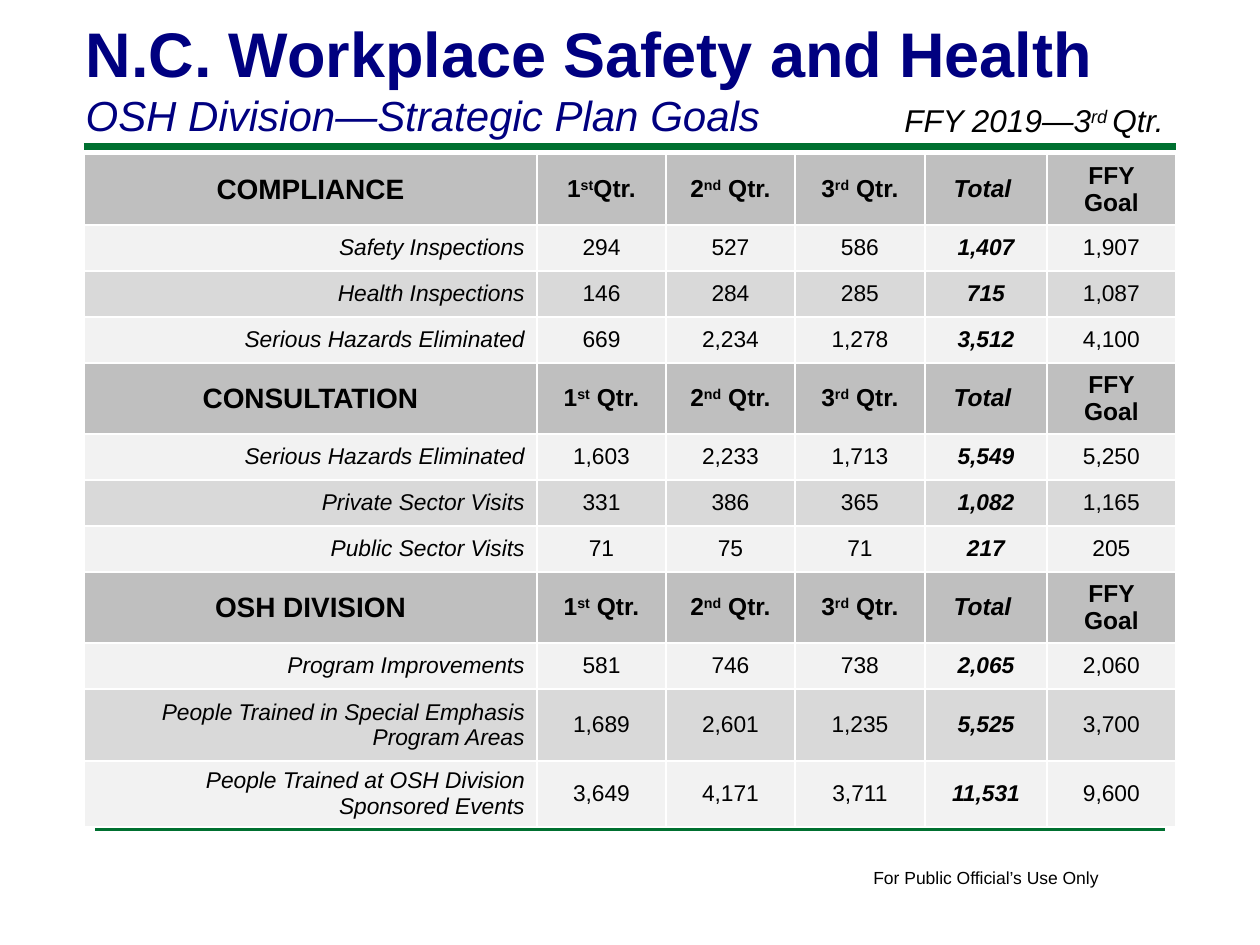
from lxml import etree
from pptx import Presentation
from pptx.dml.color import RGBColor
from pptx.enum.shapes import MSO_CONNECTOR
from pptx.enum.text import MSO_ANCHOR, MSO_AUTO_SIZE, PP_ALIGN
from pptx.oxml import parse_xml
from pptx.oxml.ns import nsdecls, qn
from pptx.util import Emu, Pt

LEFT, CENTER, RIGHT = PP_ALIGN.LEFT, PP_ALIGN.CENTER, PP_ALIGN.RIGHT
TOP, MIDDLE = MSO_ANCHOR.TOP, MSO_ANCHOR.MIDDLE
PX = 914400 / 126
NAVY, GREEN, BLACK, WHITE = "000080", "007030", "000000", "FFFFFF"
HEADER_FILL, BAND_FILLS = "BFBFBF", ("F2F2F2", "D9D9D9")


def px(*lengths):
    """Turn px lengths into a list of EMU."""
    return [Emu(round(length * PX)) for length in lengths]


def write(paragraph, text, size, color=BLACK, bold=False, italic=False, align=LEFT):
    """Fill a paragraph; parts between ^ marks are superscript."""
    paragraph.alignment = align
    paragraph.line_spacing = 1.0
    for i, part in enumerate(text.split("^")):
        run = paragraph.add_run()
        run.text = part
        font = run.font
        font.name, font.size, font.bold, font.italic = "Arial", Pt(size), bold, italic
        font.color.rgb = RGBColor.from_string(color)
        if i % 2:
            run._r.get_or_add_rPr().set("baseline", "30000")


prs = Presentation()
prs.slide_width, prs.slide_height = px(1260, 945)
slide = prs.slides.add_slide(prs.slide_layouts[5])

# Rules above and below the table
for left, right, y, weight in [(84, 1176, 147, 4), (95, 1165, 829, 2)]:
    rule = slide.shapes.add_connector(MSO_CONNECTOR.STRAIGHT, *px(left, y, right, y))
    rule.line.color.rgb = RGBColor.from_string(GREEN)
    rule.line.width = Pt(weight)
    etree.SubElement(rule._element.spPr, qn("a:effectLst"))

# Title and subtitle
title = slide.shapes.title
title.left, title.top, title.width, title.height = px(73, 8, 1040, 140)
heading = title.text_frame
heading.auto_size = MSO_AUTO_SIZE.NONE
heading.vertical_anchor = TOP
write(heading.paragraphs[0], "N.C. Workplace Safety and Health", 36, NAVY, bold=True)
write(heading.add_paragraph(), "OSH Division—Strategic Plan Goals", 24, NAVY, italic=True)

# Goals table: each section has a header row and banded rows
sections = [
    ("COMPLIANCE", "1^st^Qtr.", [
        ("Safety Inspections", "294", "527", "586", "1,407", "1,907"),
        ("Health Inspections", "146", "284", "285", "715", "1,087"),
        ("Serious Hazards Eliminated", "669", "2,234", "1,278", "3,512", "4,100"),
    ]),
    ("CONSULTATION", "1^st^ Qtr.", [
        ("Serious Hazards Eliminated", "1,603", "2,233", "1,713", "5,549", "5,250"),
        ("Private Sector Visits", "331", "386", "365", "1,082", "1,165"),
        ("Public Sector Visits", "71", "75", "71", "217", "205"),
    ]),
    ("OSH DIVISION", "1^st^ Qtr.", [
        ("Program Improvements", "581", "746", "738", "2,065", "2,060"),
        ("People Trained in Special Emphasis Program Areas",
         "1,689", "2,601", "1,235", "5,525", "3,700"),
        ("People Trained at OSH Division Sponsored Events",
         "3,649", "4,171", "3,711", "11,531", "9,600"),
    ]),
]
rows = []
for section, first_quarter, goals in sections:
    rows.append((HEADER_FILL, (section, first_quarter, "2^nd^ Qtr.", "3^rd^ Qtr.",
                               "Total ", "FFY Goal")))
    rows += [(BAND_FILLS[i % 2], goal) for i, goal in enumerate(goals)]

column_widths = [453, 129, 129, 130, 122, 129]
row_heights = [71, 46, 46, 46] * 2 + [71, 46, 72, 66]
table = slide.shapes.add_table(
    len(rows), len(column_widths),
    *px(84, 154, sum(column_widths), sum(row_heights))).table
for column, width in zip(table.columns, px(*column_widths)):
    column.width = width
for row, height in zip(table.rows, px(*row_heights)):
    row.height = height

LABEL, TOTAL = 0, 4
for r, (fill, texts) in enumerate(rows):
    is_header = fill == HEADER_FILL
    for c, text in enumerate(texts):
        cell = table.cell(r, c)
        cell.vertical_anchor = MIDDLE
        tcPr = cell._tc.get_or_add_tcPr()
        for side in ("lnL", "lnR", "lnT", "lnB"):
            tcPr.append(parse_xml(
                f'<a:{side} {nsdecls("a")} w="12700"><a:solidFill>'
                f'<a:srgbClr val="{WHITE}"/></a:solidFill></a:{side}>'))
        cell.fill.solid()
        cell.fill.fore_color.rgb = RGBColor.from_string(fill)
        if is_header:
            size = 16 if c == LABEL else 14
        else:
            size = 13
        write(cell.text_frame.paragraphs[0], text, size,
              bold=is_header or c == TOTAL,
              italic=c == TOTAL or (c == LABEL and not is_header),
              align=RIGHT if c == LABEL and not is_header else CENTER)

# Reporting period and footer
for box, text, size, italic, wrap in [
    ((892, 95, 315, 50), "FFY 2019—3^rd ^Qtr.", 18, True, True),
    ((861, 861, 253, 34), "For Public Official’s Use Only", 10, False, False),
]:
    frame = slide.shapes.add_textbox(*px(*box)).text_frame
    frame.word_wrap = wrap
    write(frame.paragraphs[0], text, size, italic=italic)

prs.save("out.pptx")
